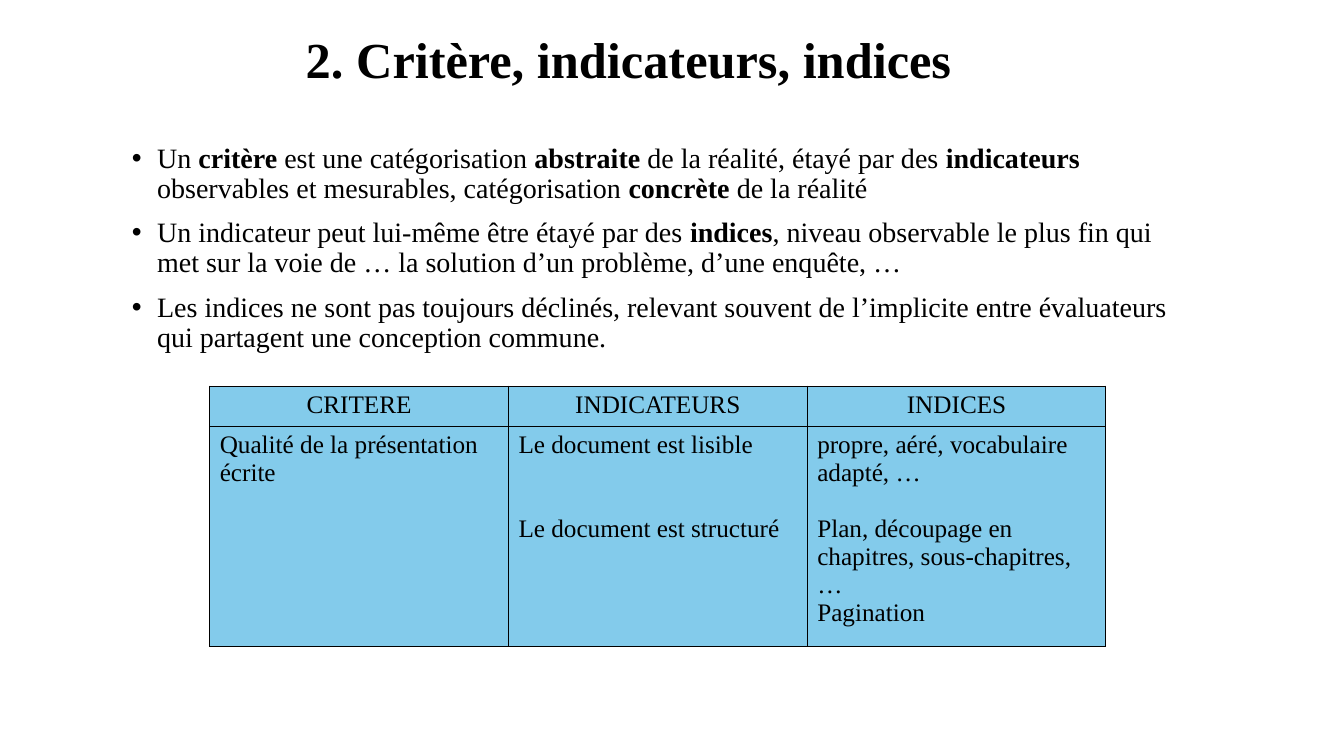
from dataclasses import dataclass

from lxml.etree import SubElement
from pptx import Presentation
from pptx.dml.color import RGBColor
from pptx.enum.text import MSO_ANCHOR, MSO_AUTO_SIZE, PP_ALIGN
from pptx.oxml.ns import qn
from pptx.util import Inches, Pt


@dataclass(frozen=True)
class Theme:
    """Colours, font and type sizes of the slide."""
    ink: RGBColor = RGBColor(0, 0, 0)
    cell: RGBColor = RGBColor(0x83, 0xCB, 0xEB)
    font: str = "Times New Roman"
    title: int = 36
    body: int = 20
    table: int = 18
    blank_line: int = 20
    border: float = 0.75


THEME = Theme()

DEFINITIONS = [
    [("Un ", False), ("critère", True), (" est une catégorisation ", False),
     ("abstraite", True), (" de la réalité, étayé par des ", False),
     ("indicateurs", True), (" observables et mesurables, catégorisation ", False),
     ("concrète", True), (" de la réalité", False)],
    [("Un indicateur peut lui-même être étayé par des ", False), ("indices", True),
     (", niveau observable le plus fin qui met sur la voie de … la solution "
      "d’un problème, d’une enquête, …", False)],
    [("Les indices ne sont pas toujours déclinés, relevant souvent de l’implicite "
      "entre évaluateurs qui partagent une conception commune.", False)],
]

HEADINGS = ["CRITERE", "INDICATEURS", "INDICES"]

EXAMPLE = [
    [("Qualité de la présentation écrite", 0)],
    [("Le document est lisible", 0), ("Le document est structuré", 2)],
    [("propre, aéré, vocabulaire adapté, …", 0),
     ("Plan, découpage en chapitres, sous-chapitres, …", 1), ("Pagination", 0)],
]


def add_run(paragraph, text, size, bold=False):
    """Append one run in the theme's font and ink."""
    run = paragraph.add_run()
    run.text = text
    run.font.name = THEME.font
    run.font.size = Pt(size)
    run.font.bold = bold
    run.font.color.rgb = THEME.ink


def next_paragraph(frame, index):
    """Return the first paragraph of a frame, or a new one after it."""
    return frame.add_paragraph() if index else frame.paragraphs[0]


def add_bullet(paragraph, indent):
    """Give a paragraph a round bullet with a hanging indent."""
    properties = paragraph._p.get_or_add_pPr()
    properties.set("marL", str(indent))
    properties.set("indent", str(-indent))
    SubElement(properties, qn("a:buFont"), typeface="Arial")
    SubElement(properties, qn("a:buChar"), char="•")


def outline_cell(cell):
    """Draw a thin line on all four sides of a cell."""
    properties = cell._tc.get_or_add_tcPr()
    for position, side in enumerate(("lnL", "lnR", "lnT", "lnB")):
        line = SubElement(properties, qn(f"a:{side}"), w=str(Pt(THEME.border)))
        fill = SubElement(line, qn("a:solidFill"))
        SubElement(fill, qn("a:srgbClr"), val=str(THEME.ink))
        properties.insert(position, line)


def fill_cell(cell, lines, alignment):
    """Write a cell's lines, each with the blank lines wanted before it."""
    cell.fill.solid()
    cell.fill.fore_color.rgb = THEME.cell
    outline_cell(cell)
    for index, (text, gap) in enumerate(lines):
        paragraph = next_paragraph(cell.text_frame, index)
        paragraph.alignment = alignment
        paragraph.space_before = Pt(gap * THEME.blank_line)
        add_run(paragraph, text, THEME.table)


def place_title(slide, left, top, width, height):
    """Place and write the slide title."""
    title = slide.shapes.title
    title.left, title.top, title.width, title.height = left, top, width, height
    frame = title.text_frame
    frame.auto_size = MSO_AUTO_SIZE.NONE
    frame.vertical_anchor = MSO_ANCHOR.MIDDLE
    heading = frame.paragraphs[0]
    heading.alignment = PP_ALIGN.CENTER
    heading.line_spacing = 0.9
    add_run(heading, "2. Critère, indicateurs, indices", THEME.title, True)


def place_definitions(slide, left, top, width, height):
    """Place the bulleted definitions."""
    frame = slide.shapes.add_textbox(left, top, width, height).text_frame
    frame.word_wrap = True
    for index, definition in enumerate(DEFINITIONS):
        paragraph = next_paragraph(frame, index)
        paragraph.line_spacing = 0.9
        paragraph.space_before = Pt(10)
        add_bullet(paragraph, Inches(0.25))
        for text, bold in definition:
            add_run(paragraph, text, THEME.body, bold)


def place_example(slide, left, top, width, height):
    """Place the table that breaks one criterion down."""
    table = slide.shapes.add_table(2, len(HEADINGS), left, top, width, height).table
    header_height = Inches(0.38)
    table.rows[0].height = header_height
    table.rows[1].height = height - header_height
    for column, (heading, lines) in enumerate(zip(HEADINGS, EXAMPLE)):
        fill_cell(table.cell(0, column), [(heading, 0)], PP_ALIGN.CENTER)
        fill_cell(table.cell(1, column), lines, PP_ALIGN.LEFT)


def main():
    """Build the slide and save it."""
    deck = Presentation()
    deck.slide_width, deck.slide_height = Inches(13.33), Inches(7.5)
    slide = deck.slides.add_slide(deck.slide_layouts[5])
    place_title(slide, Inches(0.92), Inches(0.14), Inches(10.63), Inches(0.96))
    place_definitions(slide, Inches(1.21), Inches(1.38), Inches(10.63), Inches(2.3))
    place_example(slide, Inches(2.08), Inches(3.83), Inches(8.89), Inches(2.41))
    deck.save("out.pptx")


if __name__ == "__main__":
    main()
